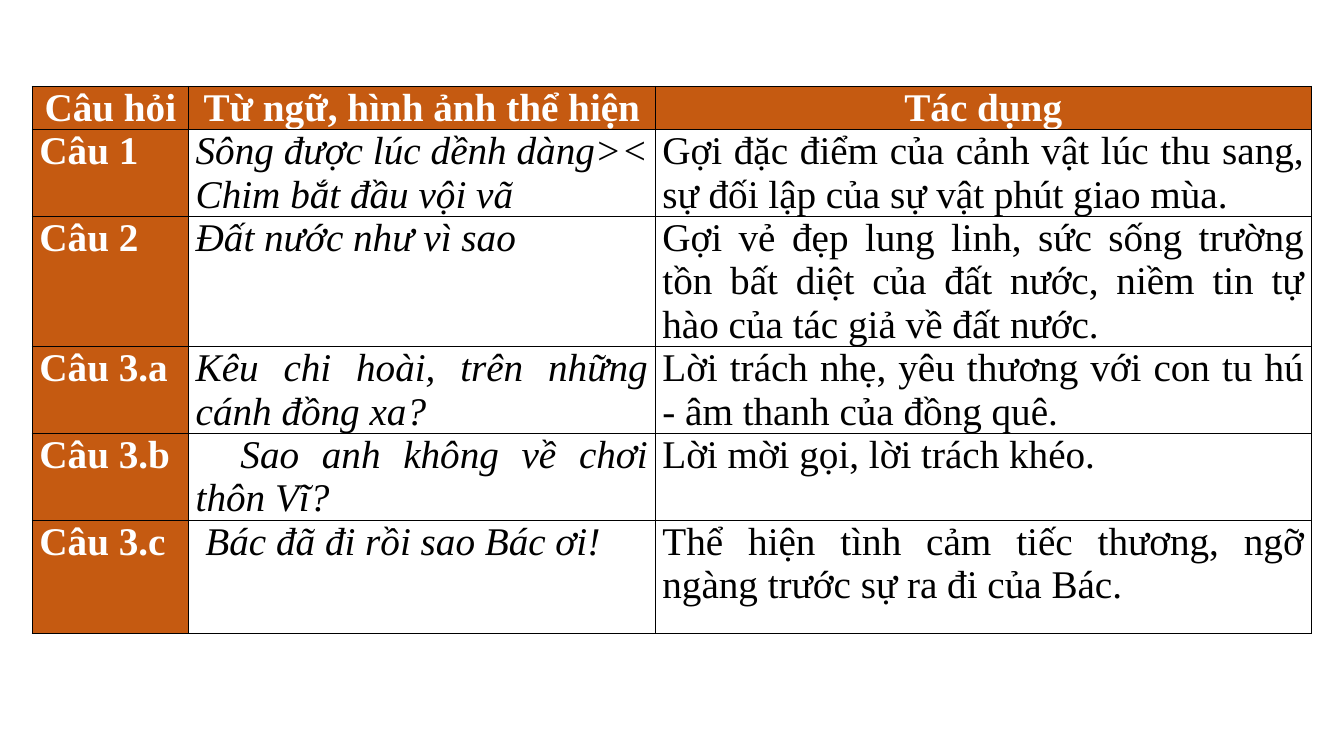
from dataclasses import dataclass

from lxml.etree import SubElement
from pptx import Presentation
from pptx.dml.color import RGBColor
from pptx.enum.text import PP_ALIGN
from pptx.oxml.ns import qn
from pptx.table import _Cell
from pptx.util import Pt

FONT = "Times New Roman"
ORANGE, WHITE, BLACK = "C55A11", "FFFFFF", "000000"
HEADINGS = ("Câu hỏi", "Từ ngữ, hình ảnh thể hiện", "Tác dụng")
COLUMN_WIDTHS = (111.6, 333.4, 468.7)
LINE_HEIGHT = 31
LAST_ROW_HEIGHT = 80.6


@dataclass(frozen=True)
class Question:
    label: str
    quote: str
    effect: str
    lines: int
    quote_indent: float = 0


QUESTIONS = (
    Question("Câu 1", "Sông được lúc dềnh dàng>< Chim bắt đầu vội vã",
             "Gợi đặc điểm của cảnh vật lúc thu sang, sự đối lập của sự vật phút giao mùa.", 2),
    Question("Câu 2", "Đất nước như vì sao",
             "Gợi vẻ đẹp lung linh, sức sống trường tồn bất diệt của đất nước, "
             "niềm tin tự hào của tác giả về đất nước.", 3),
    Question("Câu 3.a", "Kêu chi hoài, trên những cánh đồng xa?",
             "Lời trách nhẹ, yêu thương với con tu hú - âm thanh của đồng quê.", 2),
    Question("Câu 3.b", "Sao anh không về chơi thôn Vĩ?",
             "Lời mời gọi, lời trách khéo.", 2, quote_indent=32),
    Question("Câu 3.c", "Bác đã đi rồi sao Bác ơi!",
             "Thể hiện tình cảm tiếc thương, ngỡ ngàng trước sự ra đi của Bác.", 2, quote_indent=7),
)


def color(code: str) -> RGBColor:
    return RGBColor.from_string(code)


def add_borders(cell: _Cell) -> None:
    """Put a thin black line on all four sides, ahead of the cell's fill."""
    properties = cell._tc.get_or_add_tcPr()
    for position, side in enumerate(("a:lnL", "a:lnR", "a:lnT", "a:lnB")):
        line = SubElement(properties, qn(side), w=str(Pt(1)))
        properties.insert(position, line)
        fill = SubElement(line, qn("a:solidFill"))
        SubElement(fill, qn("a:srgbClr"), val=BLACK)


def fill_cell(cell: _Cell, text: str, align: PP_ALIGN, highlighted: bool = False,
              italic: bool = False, indent: float = 0) -> None:
    cell.margin_left = cell.margin_right = Pt(5.2)
    cell.margin_top = cell.margin_bottom = Pt(0)
    if highlighted:
        cell.fill.solid()
        cell.fill.fore_color.rgb = color(ORANGE)
    else:
        cell.fill.background()
    add_borders(cell)

    para = cell.text_frame.paragraphs[0]
    para.alignment = align
    if indent:
        para._p.get_or_add_pPr().set("indent", str(Pt(indent)))
    span = para.add_run()
    span.text = text
    span.font.name = FONT
    span.font.size = Pt(28)
    span.font.bold = highlighted
    span.font.italic = italic
    span.font.color.rgb = color(WHITE if highlighted else BLACK)


def main() -> None:
    deck = Presentation()
    deck.slide_width, deck.slide_height = Pt(960), Pt(540)
    page = deck.slides.add_slide(deck.slide_layouts[6])

    heights = [LINE_HEIGHT] + [question.lines * LINE_HEIGHT for question in QUESTIONS]
    heights[-1] = LAST_ROW_HEIGHT
    table = page.shapes.add_table(len(heights), len(COLUMN_WIDTHS), Pt(23), Pt(61.7),
                                  Pt(sum(COLUMN_WIDTHS)), Pt(sum(heights))).table
    table.first_row = table.horz_banding = False
    for column, width in zip(table.columns, COLUMN_WIDTHS):
        column.width = Pt(width)
    for row, height in zip(table.rows, heights):
        row.height = Pt(height)

    for index, heading in enumerate(HEADINGS):
        fill_cell(table.cell(0, index), heading, PP_ALIGN.CENTER, highlighted=True)
    for index, question in enumerate(QUESTIONS, start=1):
        fill_cell(table.cell(index, 0), question.label, PP_ALIGN.JUSTIFY, highlighted=True)
        fill_cell(table.cell(index, 1), question.quote, PP_ALIGN.JUSTIFY,
                  italic=True, indent=question.quote_indent)
        fill_cell(table.cell(index, 2), question.effect, PP_ALIGN.JUSTIFY)

    deck.save("out.pptx")


if __name__ == "__main__":
    main()
